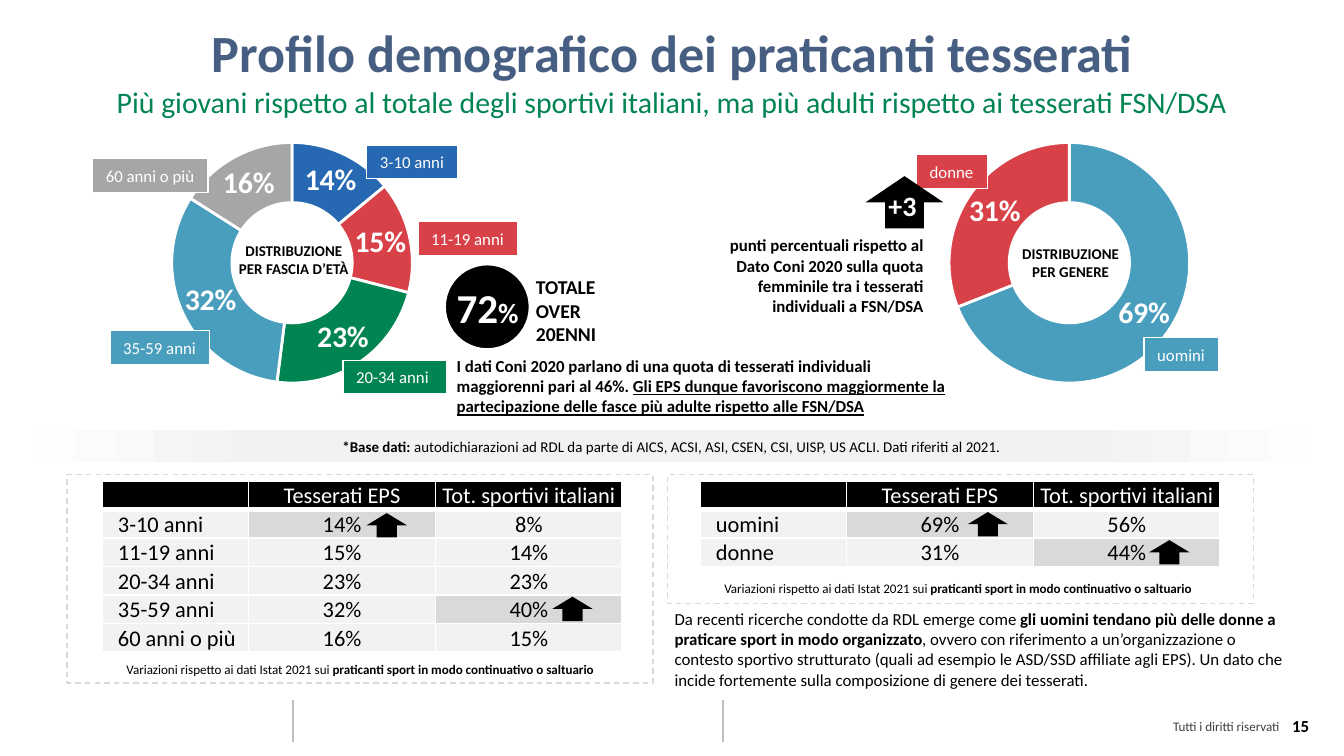
from dataclasses import dataclass

from lxml import etree
from pptx import Presentation
from pptx.chart.data import CategoryChartData
from pptx.dml.color import RGBColor
from pptx.enum.chart import XL_CHART_TYPE
from pptx.enum.dml import MSO_LINE
from pptx.enum.shapes import MSO_CONNECTOR, MSO_SHAPE
from pptx.enum.text import MSO_ANCHOR, MSO_AUTO_SIZE, PP_ALIGN
from pptx.oxml.ns import qn
from pptx.util import Cm, Pt

LEFT, CENTER, RIGHT = PP_ALIGN.LEFT, PP_ALIGN.CENTER, PP_ALIGN.RIGHT
TOP, MIDDLE, BOTTOM = MSO_ANCHOR.TOP, MSO_ANCHOR.MIDDLE, MSO_ANCHOR.BOTTOM
RECTANGLE, ELLIPSE, UP_ARROW = MSO_SHAPE.RECTANGLE, MSO_SHAPE.OVAL, MSO_SHAPE.UP_ARROW
STRAIGHT, DASH, DOUGHNUT = MSO_CONNECTOR.STRAIGHT, MSO_LINE.DASH, XL_CHART_TYPE.DOUGHNUT


@dataclass(frozen=True)
class Theme:
    font: str = "Calibri"
    black: str = "000000"
    white: str = "FFFFFF"
    title: str = "465E82"
    green: str = "008452"
    blue: str = "2668B2"
    red: str = "D94149"
    teal: str = "499EBD"
    gray: str = "A6A6A6"
    rule: str = "BFBFBF"
    footer: str = "404040"
    cell: str = "F2F2F2"
    highlight: str = "D9D9D9"
    title_size: float = 28
    subtitle_size: float = 16
    number_size: float = 22
    unit_size: float = 15
    table_size: float = 12
    callout_size: float = 10.5
    body_size: float = 9
    small_size: float = 8
    note_size: float = 7


THEME = Theme()


class SlideBuilder:
    def __init__(self, slide, theme):
        self.slide = slide
        self.theme = theme

    def style(self, font, size, color, bold=False):
        font.name, font.size, font.bold = self.theme.font, Pt(size), bold
        font.color.rgb = RGBColor.from_string(color)

    def fill_paragraph(self, paragraph, runs, size, color, bold=False, align=LEFT):
        """Write runs given as one string or as (text, font attributes) pairs."""
        paragraph.alignment = align
        self.style(paragraph.font, size, color, bold)
        for content, attributes in [(runs, {})] if isinstance(runs, str) else runs:
            run = paragraph.add_run()
            run.text = content
            for name, value in attributes.items():
                setattr(run.font, name, value)

    def title(self, box, heading, subtitle):
        shape = self.slide.shapes.title
        shape.left, shape.top, shape.width, shape.height = map(Cm, box)
        frame = shape.text_frame
        frame.auto_size, frame.vertical_anchor = MSO_AUTO_SIZE.NONE, MIDDLE
        theme = self.theme
        self.fill_paragraph(frame.paragraphs[0], heading, theme.title_size, theme.title, True, CENTER)
        self.fill_paragraph(frame.add_paragraph(), subtitle, theme.subtitle_size, theme.green, False, CENTER)

    def text(self, box, runs, size, color=THEME.black, bold=False, align=LEFT, insets=None):
        frame = self.slide.shapes.add_textbox(*map(Cm, box)).text_frame
        frame.word_wrap = True
        if insets:
            frame.margin_left = frame.margin_right = Cm(insets[0])
            frame.margin_top = frame.margin_bottom = Cm(insets[1])
        self.fill_paragraph(frame.paragraphs[0], runs, size, color, bold, align)

    def shape(self, kind, box, fill=None, line=None, width=0.75, dash=None):
        shape = self.slide.shapes.add_shape(kind, *map(Cm, box))
        shape.shadow.inherit = False
        if fill:
            shape.fill.solid()
            shape.fill.fore_color.rgb = RGBColor.from_string(fill)
        else:
            shape.fill.background()
        if line:
            shape.line.color.rgb = RGBColor.from_string(line)
            shape.line.width = Pt(width)
            shape.line.dash_style = dash
        else:
            shape.line.fill.background()
        return shape

    def tag(self, left, top, width, label, color):
        shape = self.shape(RECTANGLE, (left, top, width, 0.64), color, self.theme.white)
        shape.text_frame.word_wrap = False
        self.fill_paragraph(shape.text_frame.paragraphs[0], label, self.theme.body_size, self.theme.white)

    def band(self, box, runs):
        """Full-width strip that fades to white at both ends."""
        theme = self.theme
        shape = self.shape(RECTANGLE, box)
        shape.fill.gradient()
        shape.fill.gradient_angle = 0
        stops = shape._element.spPr.find(".//" + qn("a:gsLst"))
        stops.clear()
        for position, color in ((0, theme.white), (20, theme.cell), (80, theme.cell), (100, theme.white)):
            stop = etree.SubElement(stops, qn("a:gs"), pos=str(position * 1000))
            etree.SubElement(stop, qn("a:srgbClr"), val=color)
        self.fill_paragraph(shape.text_frame.paragraphs[0], runs, theme.small_size, theme.black, align=CENTER)

    def line(self, x, top, bottom):
        connector = self.slide.shapes.add_connector(STRAIGHT, Cm(x), Cm(top), Cm(x), Cm(bottom))
        connector.line.color.rgb = RGBColor.from_string(self.theme.rule)
        connector.line.width = Pt(1)
        etree.SubElement(connector._element.spPr, qn("a:effectLst"))

    def doughnut(self, box, values, colors):
        theme = self.theme
        data = CategoryChartData(number_format="0%")
        data.categories = [str(number) for number in range(1, len(values) + 1)]
        data.add_series("Series 1", values)
        chart = self.slide.shapes.add_chart(DOUGHNUT, *map(Cm, box), data).chart
        chart.has_legend = chart.has_title = False
        self.style(chart.font, 10, theme.black)
        plot = chart.plots[0]
        plot.vary_by_categories = plot.has_data_labels = True
        labels = plot.data_labels
        labels.show_value, labels.show_percentage = True, False
        labels.number_format, labels.number_format_is_linked = "0%", False
        self.style(labels.font, theme.subtitle_size, theme.white, True)
        for index, color in enumerate(colors):
            point = plot.series[0].points[index].format
            point.fill.solid()
            point.fill.fore_color.rgb = RGBColor.from_string(color)
            point.line.color.rgb = RGBColor.from_string(theme.white)
            point.line.width = Pt(1.5)
        area = chart._chartSpace.find(".//" + qn("c:plotArea"))
        area.find(".//" + qn("c:holeSize")).set("val", "60")
        for old_layout in area.findall(qn("c:layout")):
            area.remove(old_layout)
        layout = etree.Element(qn("c:layout"))
        area.insert(0, layout)
        manual = etree.SubElement(layout, qn("c:manualLayout"))
        for name, value in (("layoutTarget", "inner"), ("xMode", "edge"), ("yMode", "edge"),
                            ("x", "0.21"), ("y", "0.02"), ("w", "0.57"), ("h", "0.97")):
            etree.SubElement(manual, qn("c:" + name), val=value)

    def borders(self, cell, top, bottom):
        properties = cell._tc.get_or_add_tcPr()
        for side, width in (("L", 1), ("R", 1), ("T", top), ("B", bottom)):
            line = etree.SubElement(properties, qn("a:ln" + side), w=str(Pt(width)))
            fill = etree.SubElement(line, qn("a:solidFill"))
            etree.SubElement(fill, qn("a:srgbClr"), val=self.theme.white)

    def table(self, left, top, rows, highlights):
        theme = self.theme
        rows = [("", "Tesserati EPS", "Tot. sportivi italiani"), *rows]
        widths, row_height = (2.77, 3.53, 3.53), 0.53
        table = self.slide.shapes.add_table(len(rows), len(widths), Cm(left), Cm(top),
                                            Cm(sum(widths)), Cm(row_height * len(rows))).table
        table.first_row = table.horz_banding = False
        for column, width in zip(table.columns, widths):
            column.width = Cm(width)
        for r, values in enumerate(rows):
            table.rows[r].height = Cm(row_height)
            header = r == 0
            for c, value in enumerate(values):
                cell = table.cell(r, c)
                cell.margin_left = Cm(0.03 if c or header else 0.3)
                cell.margin_right = cell.margin_top = Cm(0.03)
                cell.margin_bottom = 0
                cell.vertical_anchor = MIDDLE if header else BOTTOM
                self.borders(cell, 3 if r == 1 else 1, 3 if header else 1)
                color = theme.black if header else theme.highlight if (r, c) in highlights else theme.cell
                cell.fill.solid()
                cell.fill.fore_color.rgb = RGBColor.from_string(color)
                paragraph = cell.text_frame.paragraphs[0]
                if value:
                    self.fill_paragraph(paragraph, value, theme.table_size,
                                        theme.white if header else theme.black, align=CENTER if c else LEFT)
                else:
                    etree.SubElement(paragraph._p, qn("a:endParaRPr"), sz=str(theme.table_size * 100))


def main():
    theme = THEME
    bold = {"bold": True}
    presentation = Presentation()
    presentation.slide_width, presentation.slide_height = Cm(25.4), Cm(14.29)
    slide = presentation.slides.add_slide(presentation.slide_layouts[5])
    builder = SlideBuilder(slide, theme)

    builder.text((19.53, 13.49, 4.83, 0.48), "Tutti i diritti riservati", theme.note_size, theme.footer,
                 align=RIGHT, insets=(0.18, 0.1))
    for x in (5.54, 13.67):
        builder.line(x, 13.23, 14.02)
    builder.text((23.67, 13.41, 1.32, 0.76), "15", theme.body_size, bold=True, align=RIGHT)
    builder.title((0, 0.28, 25.4, 2.08), "Profilo demografico dei praticanti tesserati",
                  "Più giovani rispetto al totale degli sportivi italiani, ma più adulti rispetto ai tesserati FSN/DSA")
    builder.band((0, 8.13, 25.4, 0.61), [("*Base dati: ", bold), (
        "autodichiarazioni ad RDL da parte di AICS, ACSI, ASI, CSEN, CSI, UISP, US ACLI. Dati riferiti al 2021.", {})])

    builder.doughnut((1.57, 2.57, 7.98, 4.75), (0.14, 0.15, 0.23, 0.32, 0.16),
                     (theme.blue, theme.red, theme.green, theme.teal, theme.gray))
    builder.doughnut((16.26, 2.57, 7.98, 4.75), (0.69, 0.31), (theme.teal, theme.red))
    for left, top, label in ((4.17, 4.45, "DISTRIBUZIONE PER FASCIA D’ETÀ"), (18.85, 4.5, "DISTRIBUZIONE PER GENERE")):
        builder.text((left, top, 2.77, 0.94), label, theme.small_size, bold=True, align=CENTER)
    for tag in ((17.32, 2.92, 1.35, "donne", theme.red), (21.62, 6.38, 1.42, "uomini", theme.teal),
                (6.93, 2.74, 1.73, "3-10 anni", theme.blue), (7.9, 4.19, 1.88, "11-19 anni", theme.red),
                (6.48, 6.81, 1.96, "20-34 anni", theme.green), (2.08, 6.25, 1.88, "35-59 anni", theme.teal),
                (1.75, 3, 2.18, "60 anni o più", theme.gray)):
        builder.tag(*tag)

    builder.shape(UP_ARROW, (16.36, 3.33, 1.47, 0.99), theme.black)
    builder.text((16.54, 3.43, 1.24, 0.89), "+3", theme.unit_size, theme.white, True)
    builder.text((13.31, 4.32, 4.39, 1.8), "punti percentuali rispetto al Dato Coni 2020 sulla quota femminile "
                 "tra i tesserati individuali a FSN/DSA", theme.body_size, bold=True, align=RIGHT)
    builder.shape(ELLIPSE, (8.41, 5, 1.6, 1.6), theme.black, theme.white, 1)
    builder.text((8.38, 5.21, 1.75, 1.19), [("72", {}), ("%", {"size": Pt(theme.unit_size)})],
                 theme.number_size, theme.white, True)
    builder.text((9.88, 5.08, 2.13, 1.6), "TOTALE OVER 20ENNI", theme.callout_size, bold=True)
    builder.text((8.38, 6.6, 9.78, 1.42), [
        ("I dati Coni 2020 parlano di una quota di tesserati individuali maggiorenni pari al 46%. ", {}),
        ("Gli EPS dunque favoriscono maggiormente la partecipazione delle fasce più adulte rispetto alle FSN/DSA",
         {"underline": True})], theme.body_size, bold=True)

    for left, height in ((1.27, 3.94), (12.62, 2.44)):
        builder.shape(RECTANGLE, (left, 8.97, 11.07, height), line=theme.highlight, dash=DASH)
    for left, top in ((1.27, 12.37), (12.57, 10.85)):
        builder.text((left, top, 11.07, 0.56), [("Variazioni rispetto ai dati Istat 2021 sui ", {}), (
            "praticanti sport in modo continuativo o saltuario", bold)], theme.note_size, align=CENTER)
    builder.table(1.93, 9.09, [("3-10 anni", "14%", "8%"), ("11-19 anni", "15%", "14%"), ("20-34 anni", "23%", "23%"),
                               ("35-59 anni", "32%", "40%"), ("60 anni o più", "16%", "15%")], {(1, 1), (4, 2)})
    builder.table(13.23, 9.09, [("uomini", "69%", "56%"), ("donne", "31%", "44%")], {(1, 1), (2, 2)})
    for left, top in ((6.93, 9.7), (18.29, 9.68), (10.44, 11.28), (21.72, 10.21)):
        builder.shape(UP_ARROW, (left, top, 0.76, 0.46), theme.black)
    builder.text((12.5, 11.38, 12.01, 1.8), [
        ("Da recenti ricerche condotte da RDL emerge come ", {}),
        ("gli uomini tendano più delle donne a praticare sport in modo organizzato", bold),
        (", ovvero con riferimento a un’organizzazione o contesto sportivo strutturato (quali ad esempio le ASD/SSD "
         "affiliate agli EPS). Un dato che incide fortemente sulla composizione di genere dei tesserati.", {})],
        theme.body_size)
    presentation.save("out.pptx")


if __name__ == "__main__":
    main()
